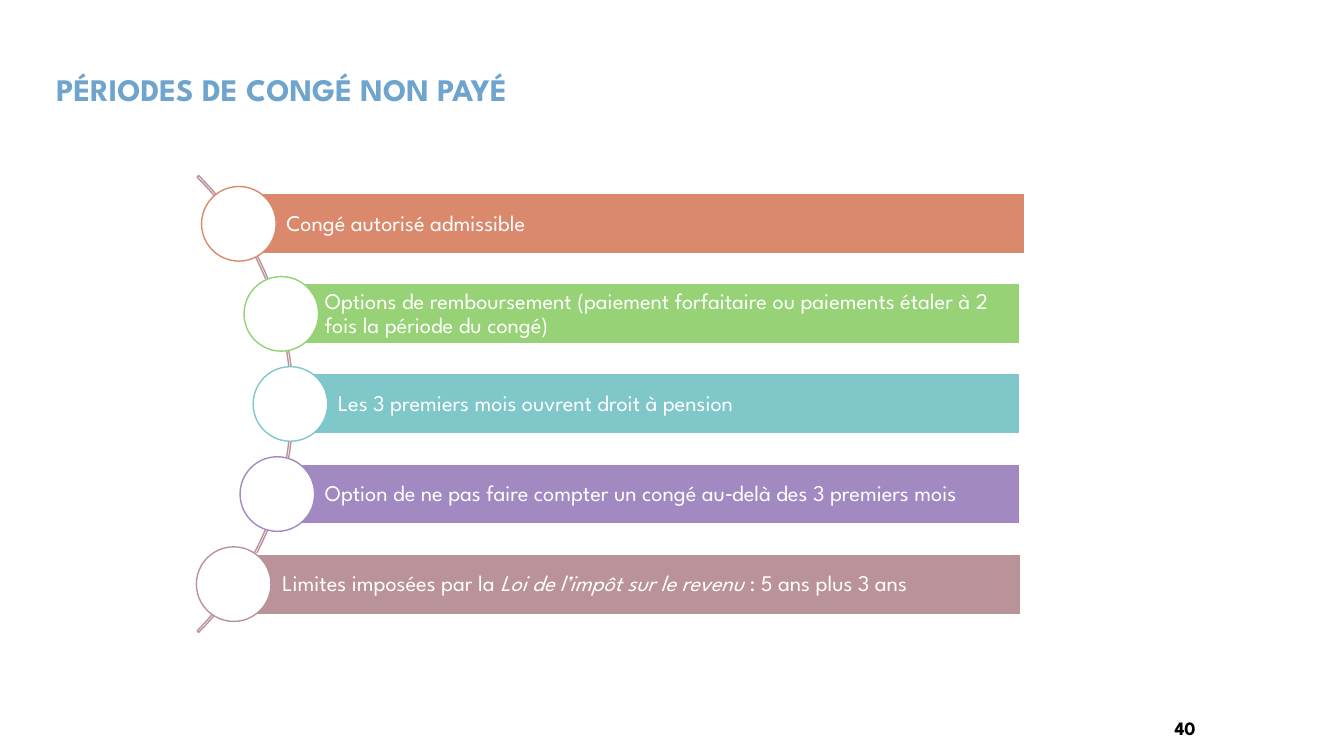
import pptx
import pptx.util
import pptx.dml.color
import pptx.enum.shapes
import pptx.enum.text

Cm = pptx.util.Cm
Pt = pptx.util.Pt
SHAPES = pptx.enum.shapes.MSO_SHAPE
ALIGN = pptx.enum.text.PP_ALIGN
ANCHOR = pptx.enum.text.MSO_ANCHOR

FONT = "League Spartan"
COLORS = {
    "white": "FFFFFF",
    "black": "000000",
    "title": "6FA5CD",
    "orange": "DA896D",
    "green": "97D276",
    "teal": "80C7CA",
    "purple": "A289C2",
    "mauve": "BA9299",
}

# Colour, bar left, bar right, circle left (cm), runs of (text, italic)
ITEMS = [
    ("orange", 6.02, 25.83, 5.08, [("Congé autorisé admissible", False)]),
    ("green", 6.99, 25.71, 6.15, [
        ("Options de remboursement (paiement forfaitaire ou paiements "
         "étaler à 2 fois la période du congé)", False)]),
    ("teal", 7.32, 25.71, 6.38,
     [("Les 3 premiers mois ouvrent droit à pension", False)]),
    ("purple", 6.99, 25.71, 6.05, [
        ("Option de ne pas faire compter un congé au‑delà des "
         "3 premiers mois", False)]),
    ("mauve", 5.92, 25.73, 4.95, [
        ("Limites imposées par la ", False),
        ("Loi de l’impôt sur le revenu", True),
        (" : 5 ans plus 3 ans", False)]),
]


def rgb(name):
    return pptx.dml.color.RGBColor.from_string(COLORS[name])


def add_span(para, text, size, color, bold=False, italic=False):
    span = para.add_run()
    span.text = text
    span.font.name = FONT
    span.font.size = Pt(size)
    span.font.bold = bold
    span.font.italic = italic
    span.font.color.rgb = rgb(color)
    return span


def add_figure(page, kind, left, top, width, height, fill, line):
    figure = page.shapes.add_shape(kind, Cm(left), Cm(top), Cm(width), Cm(height))
    figure.shadow.inherit = False
    if fill:
        figure.fill.solid()
        figure.fill.fore_color.rgb = rgb(fill)
    else:
        figure.fill.background()
    figure.line.color.rgb = rgb(line)
    figure.line.width = Pt(1)
    return figure


def add_label(page, left, top, width, height, anchor):
    box = page.shapes.add_textbox(Cm(left), Cm(top), Cm(width), Cm(height))
    box.text_frame.word_wrap = True
    box.text_frame.vertical_anchor = anchor
    return box.text_frame.paragraphs[0]


def add_title(page, left, top, width, height):
    para = add_label(page, left, top, width, height, ANCHOR.MIDDLE)
    para.line_spacing = 0.9
    span = add_span(para, "périodes de congé non payé", 28, "title", bold=True)
    span.font._element.set("cap", "small")


def add_bar(page, left, top, width, height, color, runs):
    bar = add_figure(page, SHAPES.RECTANGLE, left, top, width, height, color, "white")
    frame = bar.text_frame
    frame.word_wrap = True
    frame.vertical_anchor = ANCHOR.MIDDLE
    frame.margin_left = Cm(1.2)
    frame.margin_right = frame.margin_top = frame.margin_bottom = Cm(0.1)
    para = frame.paragraphs[0]
    para.alignment = ALIGN.LEFT
    para.line_spacing = 0.9
    for text, italic in runs:
        add_span(para, text, 16, "white", italic=italic)


def add_curved_list(page, top, pitch):
    bar_height, circle_size, arc_size = 1.52, 1.88, 16.28

    # Arc behind the bars, centred on the middle one
    middle = top + pitch * (len(ITEMS) - 1) / 2 + bar_height / 2
    arc = add_figure(page, SHAPES.BLOCK_ARC, -8.89, middle - arc_size / 2,
                     arc_size, arc_size, None, "mauve")
    for index, value in enumerate((189, 27, 0.0034)):
        arc.adjustments[index] = value

    # Bars with their circles
    for index, (color, left, right, circle_left, runs) in enumerate(ITEMS):
        bar_top = top + index * pitch
        add_bar(page, left, bar_top, right - left, bar_height, color, runs)
        add_figure(page, SHAPES.OVAL, circle_left,
                   bar_top + (bar_height - circle_size) / 2,
                   circle_size, circle_size, "white", color)


def add_page_number(page, left, top, width, height):
    para = add_label(page, left, top, width, height, ANCHOR.TOP)
    para.alignment = ALIGN.RIGHT
    add_span(para, "40", 13.5, "black", bold=True)


def main():
    deck = pptx.Presentation()
    deck.slide_width, deck.slide_height = Cm(33.87), Cm(19.05)
    page = deck.slides.add_slide(deck.slide_layouts[6])
    add_title(page, 1.17, 1.6, 13.08, 1.3)
    add_curved_list(page, 4.88, 2.27)
    add_page_number(page, 24.66, 17.93, 5.72, 0.76)
    deck.save("out.pptx")


if __name__ == "__main__":
    main()
